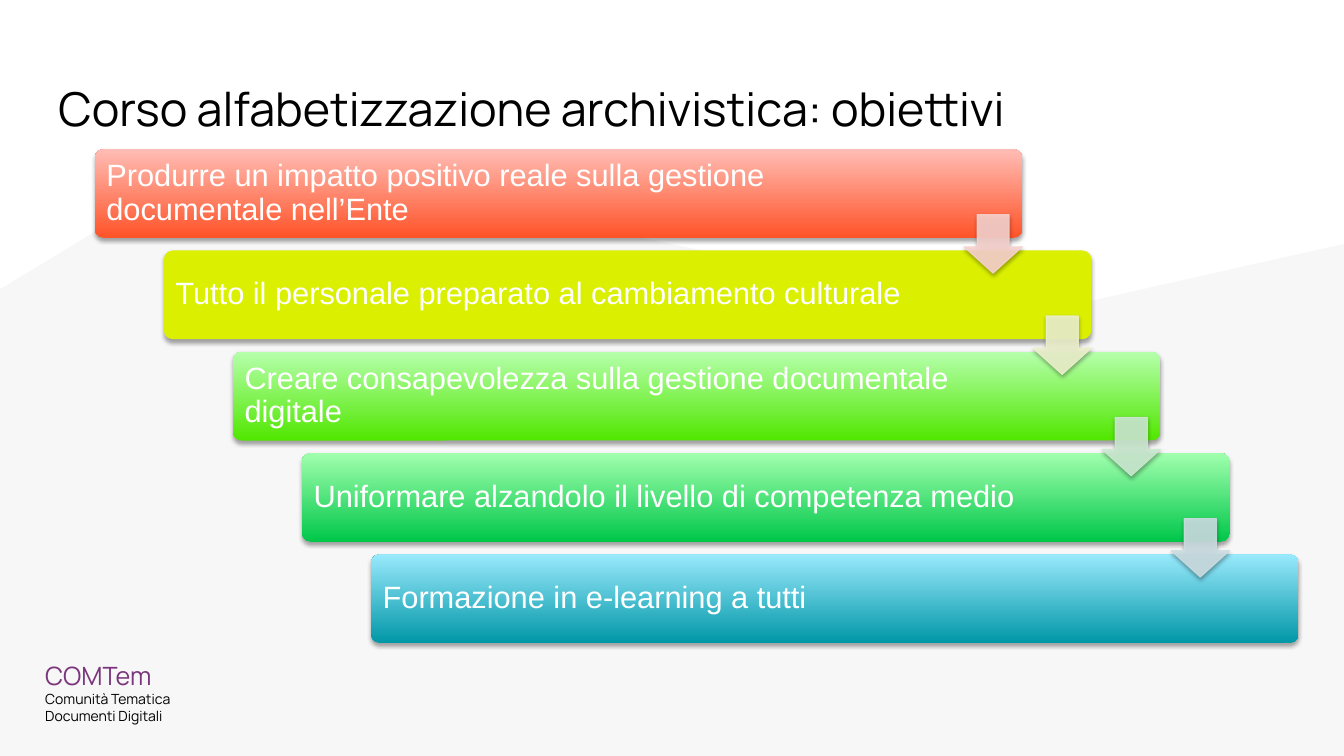
from lxml import etree
from pptx import Presentation
from pptx.dml.color import RGBColor
from pptx.enum import shapes, text
from pptx.oxml import ns
from pptx.util import Inches, Pt

# Text, and gradient colours from bottom to top (one colour means a plain fill)
GOALS = [
    ("Produrre un impatto positivo reale sulla gestione documentale nell’Ente",
     ["FF5328", "FFBDB5"]),
    ("Tutto il personale preparato al cambiamento culturale", ["DBF000"]),
    ("Creare consapevolezza sulla gestione documentale digitale",
     ["51E700", "B6FFAC"]),
    ("Uniformare alzandolo il livello di competenza medio",
     ["00C74A", "A1FFAD"]),
    ("Formazione in e-learning a tutti", ["0097A7", "99E9FC"]),
]
ARROW_COLOURS = ["F7D2CE", "ECF1CC", "CBE9D0", "CCDDE1"]

# Staircase geometry in inches
BAR_LEFT, BAR_TOP, BAR_WIDTH, BAR_HEIGHT = 0.94, 1.48, 9.2, 0.88
STEP_X, STEP_Y = 0.685, 1.005
ARROW_SIZE, ARROW_TOP = 0.58, 2.13


def colour(value):
    return RGBColor.from_string(value)


def set_insets(frame, **inches):
    for side, length in inches.items():
        setattr(frame, f"margin_{side}", Inches(length))


def write(para, content, size, font, hex_colour):
    span = para.add_run()
    span.text = content
    for name, value in {"size": Pt(size), "name": font}.items():
        setattr(span.font, name, value)
    span.font.color.rgb = colour(hex_colour)


def add_alpha(fill_element, percent):
    for tint in fill_element.iter(ns.qn("a:srgbClr")):
        etree.SubElement(tint, ns.qn("a:alpha"), val=str(percent * 1000))


def add_shadow(shape):
    shape.shadow.inherit = False
    effects = shape._element.spPr.find(ns.qn("a:effectLst"))
    shadow = etree.SubElement(
        effects, ns.qn("a:outerShdw"), blurRad=str(Pt(3.1)),
        dist=str(Pt(1.8)), dir="5400000", rotWithShape="0")
    etree.SubElement(shadow, ns.qn("a:srgbClr"), val="000000")
    add_alpha(shadow, 35)


def add_backdrop(page):
    builder = page.shapes.build_freeform(0, Inches(7.5))
    corners = [(0, 2.87), (2.25, 1.51), (10.13, 3.14), (13.33, 2.42),
               (13.33, 7.5)]
    builder.add_line_segments([(Inches(x), Inches(y)) for x, y in corners])
    backdrop = builder.convert_to_shape()
    backdrop.shadow.inherit = False
    backdrop.fill.solid()
    backdrop.fill.fore_color.rgb = colour("F8F7F7")
    backdrop.line.fill.background()


def add_title(page):
    title = page.shapes.title
    place = {"left": 0.45, "top": 0.65, "width": 12.42, "height": 0.83}
    for name, value in place.items():
        setattr(title, name, Inches(value))
    frame = title.text_frame
    frame.auto_size = text.MSO_AUTO_SIZE.NONE
    frame.vertical_anchor = text.MSO_ANCHOR.MIDDLE
    set_insets(frame, left=0.13, top=0.13, right=0.13, bottom=0.13)
    para = frame.paragraphs[0]
    para.alignment = text.PP_ALIGN.LEFT
    write(para, "Corso alfabetizzazione archivistica: obiettivi", 33.3,
          "Manrope", "000000")


def add_signature(page):
    box = page.shapes.add_textbox(
        Inches(0.35), Inches(6.45), Inches(3.35), Inches(0.84))
    frame = box.text_frame
    frame.word_wrap = True
    set_insets(frame, left=0.1, top=0.1, right=0.1, bottom=0.1)
    write(frame.paragraphs[0], "COMTem", 18, "Manrope", "7B357C")
    for line in ["Comunità Tematica", "Documenti Digitali"]:
        write(frame.add_paragraph(), line, 10, "Manrope", "000000")


def add_bar(page, index, content, colours):
    bar = page.shapes.add_shape(
        shapes.MSO_SHAPE.ROUNDED_RECTANGLE,
        Inches(BAR_LEFT + index * STEP_X), Inches(BAR_TOP + index * STEP_Y),
        Inches(BAR_WIDTH), Inches(BAR_HEIGHT))
    bar.adjustments[0] = 0.1
    if len(colours) == 1:
        bar.fill.solid()
        bar.fill.fore_color.rgb = colour(colours[0])
    else:
        bar.fill.gradient()
        bar.fill.gradient_angle = 90
        for stop, value in zip(bar.fill.gradient_stops, colours):
            stop.color.rgb = colour(value)
    bar.line.fill.background()
    add_shadow(bar)

    frame = bar.text_frame
    frame.word_wrap = True
    frame.vertical_anchor = text.MSO_ANCHOR.MIDDLE
    set_insets(frame, left=0.09, top=0.09, right=1.26, bottom=0.09)
    para = frame.paragraphs[0]
    para.alignment = text.PP_ALIGN.LEFT
    para.line_spacing = 0.9
    write(para, content, 22, "Arial", "FFFFFF")


def add_arrow(page, index, hex_colour):
    left = BAR_LEFT + BAR_WIDTH - ARROW_SIZE + index * STEP_X
    arrow = page.shapes.add_shape(
        shapes.MSO_SHAPE.DOWN_ARROW,
        Inches(left), Inches(ARROW_TOP + index * STEP_Y),
        Inches(ARROW_SIZE), Inches(ARROW_SIZE))
    arrow.adjustments[0] = 0.55
    arrow.adjustments[1] = 0.45
    for fill in (arrow.fill, arrow.line.fill):
        fill.solid()
        fill.fore_color.rgb = colour(hex_colour)
    arrow.line.width = Pt(0.75)
    add_alpha(arrow._element.spPr, 90)
    add_shadow(arrow)


def main():
    deck = Presentation()
    deck.slide_width, deck.slide_height = Inches(13.33), Inches(7.5)
    page = deck.slides.add_slide(deck.slide_layouts.get_by_name("Title Only"))

    # Backdrop, signature and title
    add_backdrop(page)
    add_signature(page)
    add_title(page)

    # Staircase of goals, then the arrows that link them
    for index, (content, colours) in enumerate(GOALS):
        add_bar(page, index, content, colours)
    for index, hex_colour in enumerate(ARROW_COLOURS):
        add_arrow(page, index, hex_colour)

    deck.save("out.pptx")


if __name__ == "__main__":
    main()
